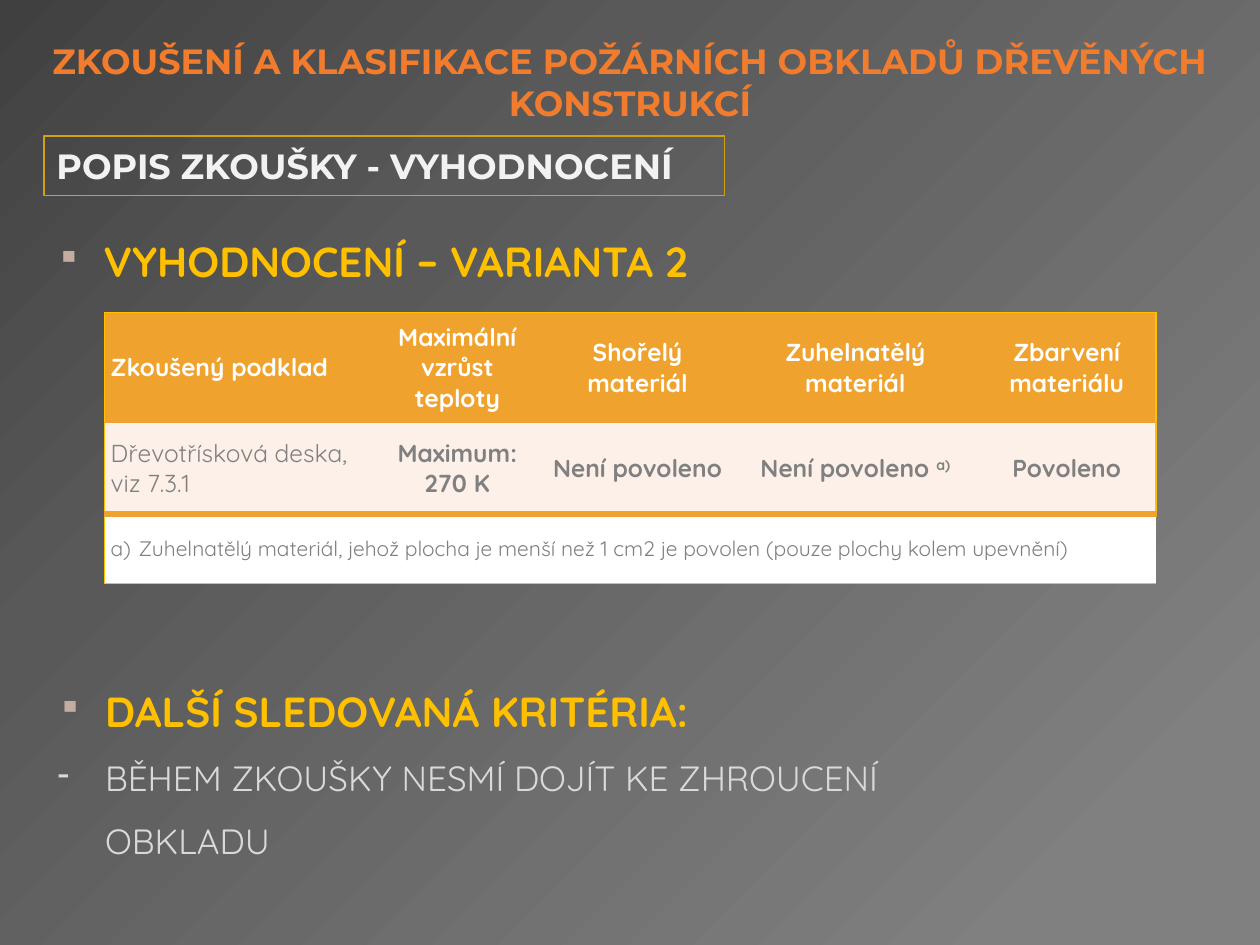
from copy import deepcopy
from pptx import Presentation
from pptx.dml.color import RGBColor
from pptx.enum.shapes import MSO_SHAPE as Shape
from pptx.enum.text import MSO_ANCHOR as Anchor, PP_ALIGN as Align
from pptx.oxml import parse_xml
from pptx.oxml.ns import nsdecls, qn
from pptx.util import Pt

HEAD, BODY = "Montserrat", "Quicksand"
ORANGE = RGBColor(0xF1, 0x7C, 0x2D)
GOLD = RGBColor(0xFF, 0xC0, 0x00)
FRAME = RGBColor(0xD2, 0xA0, 0x10)
AMBER = RGBColor(0xF0, 0xA2, 0x2E)
CREAM = RGBColor(0xFC, 0xF0, 0xE8)
WHITE = RGBColor(0xFF, 0xFF, 0xFF)
PALE = RGBColor(0xF2, 0xF2, 0xF2)
LIGHT = RGBColor(0xD9, 0xD9, 0xD9)
GRAY = RGBColor(0x80, 0x80, 0x80)
TAN = RGBColor(0xC4, 0xAD, 0xA0)
STOPS = [(0, RGBColor(0x40, 0x40, 0x40)), (0.3, RGBColor(0x59, 0x59, 0x59)),
         (0.89, GRAY)]
PLAIN = "{2D5ABB26-0587-4C30-8999-92F81FD0307C}"  # no style, no grid

# Content
TITLE = "ZKOUŠENÍ A KLASIFIKACE POŽÁRNÍCH OBKLADŮ DŘEVĚNÝCH KONSTRUKCÍ"
TOPIC = "POPIS ZKOUŠKY - VYHODNOCENÍ"
# Bullet, text, size, colour, bold
RESULT = [("▪", "VYHODNOCENÍ – VARIANTA 2", 24, GOLD, True)]
OTHER = [("▪", "DALŠÍ SLEDOVANÁ KRITÉRIA:", 24, GOLD, True),
         ("-", "BĚHEM ZKOUŠKY NESMÍ DOJÍT KE ZHROUCENÍ OBKLADU", 20, LIGHT, False)]
ROWS = [
    ["Zkoušený podklad", "Maximální vzrůst teploty", "Shořelý materiál",
     "Zuhelnatělý\vmateriál", "Zbarvení\vmateriálu"],
    ["Dřevotřísková deska,\nviz 7.3.1", "Maximum: 270 K", "Není povoleno",
     "Není povoleno ", "Povoleno"],
    ["a)\tZuhelnatělý materiál, jehož plocha je menší než 1 cm2 je povolen "
     "(pouze plochy kolem upevnění)"],
]
MARK = "a)"
WIDTHS = [153.5, 90.5, 115.5, 133.5, 108]
HEIGHTS = [62.8, 52.5, 39.5]
# Fill, text colour, size, top line, bottom line (colour, width)
LOOKS = [(AMBER, WHITE, 14, (GOLD, 1), (AMBER, 1)),
         (CREAM, GRAY, 14, (AMBER, 1), (AMBER, 4)),
         (WHITE, GRAY, 12, (AMBER, 4), (GOLD, 1))]


def style(font, face, size, color, bold):
    font.name, font.size, font.bold = face, Pt(size), bold
    font.color.rgb = color


def add_box(x, y, w, h):
    box = slide.shapes.add_textbox(Pt(x), Pt(y), Pt(w), Pt(h))
    box.text_frame.word_wrap = True
    return box.text_frame


def add_list(frame, items, gap):
    for i, (sign, text, size, color, bold) in enumerate(items):
        para = frame.paragraphs[0] if i == 0 else frame.add_paragraph()
        para.text, para.line_spacing = text, gap
        props = para._p.get_or_add_pPr()
        props.set("marL", str(Pt(27)))
        props.set("indent", str(-Pt(27)))
        if sign == "▪":
            props.append(parse_xml(f'<a:buClr {nsdecls("a")}><a:srgbClr val="{TAN}"/></a:buClr>'))
            props.append(parse_xml(f'<a:buSzPct {nsdecls("a")} val="80000"/>'))
        props.append(parse_xml(f'<a:buChar {nsdecls("a")} char="{sign}"/>'))
        style(para.font, BODY, size, color, bold)


def add_edges(cell, edges):
    props = cell._tc.get_or_add_tcPr()
    for i, (side, (color, width)) in enumerate(edges):
        props.insert(i, parse_xml(
            f'<a:ln{side} {nsdecls("a")} w="{Pt(width)}"><a:solidFill>'
            f'<a:srgbClr val="{color}"/></a:solidFill></a:ln{side}>'))


deck = Presentation()
deck.slide_width, deck.slide_height = Pt(720), Pt(540)
slide = deck.slides.add_slide(deck.slide_layouts[6])

# Background, dark at top left
fill = slide.background.fill
fill.gradient()
fill.gradient_angle = 315
stops = slide.element.find(".//" + qn("a:gsLst"))
stops.append(deepcopy(stops[-1]))
for stop, (place, color) in zip(fill.gradient_stops, STOPS):
    stop.position, stop.color.rgb = place, color

# Title
frame = add_box(0, 21, 720, 51)
frame.vertical_anchor = Anchor.MIDDLE
para = frame.paragraphs[0]
para.text, para.alignment = TITLE, Align.CENTER
style(para.font, HEAD, 20, ORANGE, True)

add_list(add_box(25.2, 102.2, 692, 62.6), RESULT, 2.0)

# Framed topic
topic = slide.shapes.add_shape(Shape.RECTANGLE, Pt(25.2), Pt(77.8), Pt(388.8), Pt(33.8))
topic.shadow.inherit = False
topic.fill.background()
topic.line.color.rgb, topic.line.width = FRAME, Pt(0.75)
topic.text_frame.vertical_anchor = Anchor.MIDDLE
para = topic.text_frame.paragraphs[0]
para.text, para.alignment = TOPIC, Align.LEFT
style(para.font, HEAD, 20, PALE, True)

add_list(add_box(25.9, 373.7, 578, 82.8), OTHER, 1.5)

# Table
table = slide.shapes.add_table(len(HEIGHTS), len(WIDTHS), Pt(59.6), Pt(178.6),
                               Pt(sum(WIDTHS)), Pt(sum(HEIGHTS))).table
table.first_row = table.horz_banding = False
table._tbl.tblPr.find(qn("a:tableStyleId")).text = PLAIN
for col, width in zip(table.columns, WIDTHS):
    col.width = Pt(width)
for row, height in zip(table.rows, HEIGHTS):
    row.height = Pt(height)
last = len(WIDTHS) - 1
table.cell(2, 0).merge(table.cell(2, last))

for r, (back, ink, size, top, base) in enumerate(LOOKS):
    for c in range(len(WIDTHS)):
        cell = table.cell(r, c)
        cell.fill.solid()
        cell.fill.fore_color.rgb = back
        edges = [("T", top), ("B", base)]
        if c == last:
            edges.insert(0, ("R", (GOLD, 1)))
        if c == 0:
            edges.insert(0, ("L", (GOLD, 1)))
        add_edges(cell, edges)
        if c >= len(ROWS[r]):
            continue
        cell.text = ROWS[r][c]
        cell.vertical_anchor = Anchor.MIDDLE
        cell.margin_left = Pt(6 if c else 3.6)
        cell.margin_right = cell.margin_top = cell.margin_bottom = 0
        for para in cell.text_frame.paragraphs:
            para.alignment = Align.CENTER if c else Align.LEFT
            if r == 2:
                para._p.get_or_add_pPr().append(parse_xml(
                    f'<a:tabLst {nsdecls("a")}><a:tab pos="{Pt(16)}" algn="l"/></a:tabLst>'))
            style(para.font, BODY, size, ink, r == 0 or c > 0)

# Raised note mark
mark = table.cell(1, 3).text_frame.paragraphs[0].add_run()
mark.text = MARK
mark.font._element.set("baseline", "30000")

deck.save("out.pptx")
